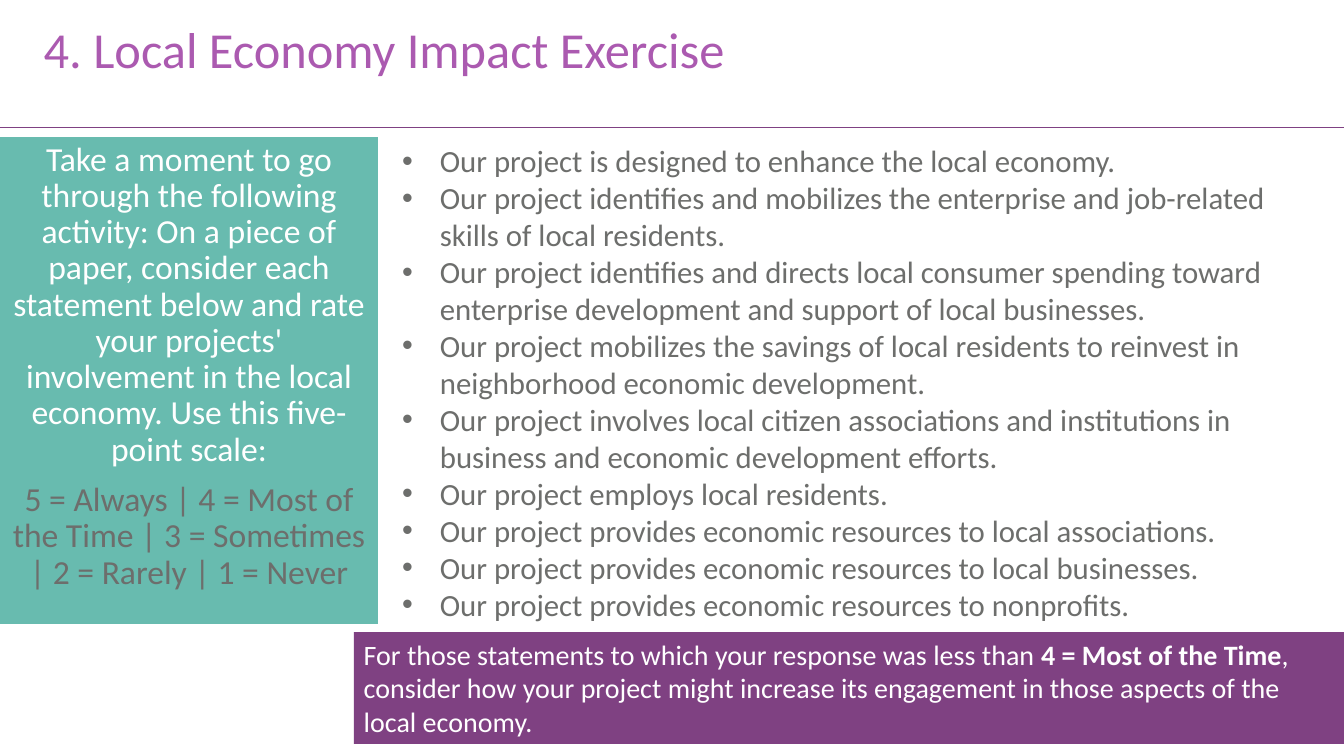
import pptx
import pptx.util
import pptx.dml.color
import pptx.enum.text
import pptx.enum.shapes
import pptx.oxml.ns
import lxml.etree
from dataclasses import dataclass

Pt = pptx.util.Pt
qn = pptx.oxml.ns.qn
ALIGN = pptx.enum.text.PP_ALIGN

HEADING = "4. Local Economy Impact Exercise"
INSTRUCTIONS = (
    "Take a moment to go through the following activity: On a piece of paper, "
    "consider each statement below and rate your projects' involvement in the "
    "local economy. Use this five-point scale:"
)
SCALE = "5 = Always | 4 = Most of the Time | 3 = Sometimes | 2 = Rarely | 1 = Never"
STATEMENTS = [
    "Our project is designed to enhance the local economy.",
    "Our project identifies and mobilizes the enterprise and job-related skills of local residents.",
    "Our project identifies and directs local consumer spending toward enterprise development and support of local businesses.",
    "Our project mobilizes the savings of local residents to reinvest in neighborhood economic development.",
    "Our project involves local citizen associations and institutions in business and economic development efforts.",
    "Our project employs local residents.",
    "Our project provides economic resources to local associations.",
    "Our project provides economic resources to local businesses.",
    "Our project provides economic resources to nonprofits.",
]
FOLLOW_UP = [
    ("For those statements to which your response was less than ", False),
    ("4 = Most of the Time", True),
    (", consider how your project might increase its engagement in those aspects of the local economy.", False),
]


@dataclass(frozen=True)
class Theme:
    font: str = "Calibri"
    heading: str = "AB5AB0"
    purple: str = "7F4182"
    teal: str = "68BBAF"
    grey: str = "6D6E6C"
    white: str = "FFFFFF"
    heading_size: int = 36
    sidebar_size: int = 24
    statement_size: int = 22
    follow_up_size: int = 20


THEME = Theme()
WIDTH, HEIGHT = 960, 540
RULE_Y = 90.72
CONTENT_TOP = 97.92
INDENT = 27


def rgb(value):
    return pptx.dml.color.RGBColor.from_string(value)


def write(frame, text, *, size, color, align=ALIGN.LEFT, spacing=1.0, before=0, bullet=None, first=False):
    paragraph = frame.paragraphs[0] if first else frame.add_paragraph()
    paragraph.alignment = align
    paragraph.line_spacing = spacing
    paragraph.space_before = Pt(before)
    if bullet:
        properties = paragraph._p.get_or_add_pPr()
        properties.set("marL", str(Pt(INDENT)))
        properties.set("indent", str(-Pt(INDENT)))
        lxml.etree.SubElement(properties, qn("a:buFont")).set("typeface", "Arial")
        lxml.etree.SubElement(properties, qn("a:buChar")).set("char", bullet)
    for words, bold in [(text, False)] if isinstance(text, str) else text:
        run = paragraph.add_run()
        run.text = words
        run.font.name = THEME.font
        run.font.size = Pt(size)
        run.font.bold = bold
        run.font.color.rgb = rgb(color)


def prepare(box, left, top, width, height, fill=None):
    box.left, box.top, box.width, box.height = Pt(left), Pt(top), Pt(width), Pt(height)
    if fill:
        box.fill.solid()
        box.fill.fore_color.rgb = rgb(fill)
    frame = box.text_frame
    frame.word_wrap = True
    frame.auto_size = pptx.enum.text.MSO_AUTO_SIZE.NONE
    frame.vertical_anchor = pptx.enum.text.MSO_ANCHOR.TOP
    return frame


def main():
    deck = pptx.Presentation()
    deck.slide_width, deck.slide_height = Pt(WIDTH), Pt(HEIGHT)
    slide = deck.slides.add_slide(deck.slide_layouts[1])
    shapes = slide.shapes

    rule = shapes.add_connector(
        pptx.enum.shapes.MSO_CONNECTOR.STRAIGHT, Pt(WIDTH), Pt(RULE_Y), Pt(0), Pt(RULE_Y)
    )
    rule.line.color.rgb = rgb(THEME.purple)
    rule.line.width = Pt(0.5)
    lxml.etree.SubElement(rule._element.spPr, qn("a:effectLst"))

    heading = prepare(shapes.title, 24, 14.4, 661.68, 69.12)
    write(heading, HEADING, size=THEME.heading_size, color=THEME.heading, spacing=0.9, first=True)

    sidebar = prepare(shapes.add_textbox(0, 0, 0, 0), 0, CONTENT_TOP, 270, 347.76, THEME.teal)
    sidebar_format = dict(size=THEME.sidebar_size, align=ALIGN.CENTER, spacing=0.9)
    write(sidebar, INSTRUCTIONS, color=THEME.white, first=True, **sidebar_format)
    write(sidebar, SCALE, color=THEME.grey, before=10, **sidebar_format)

    statements = prepare(slide.placeholders[1], 280, CONTENT_TOP, 661.68, 353.52)
    for index, statement in enumerate(STATEMENTS):
        write(statements, statement, size=THEME.statement_size, color=THEME.grey, bullet="•", first=index == 0)

    follow_up_left = 252.72
    follow_up = prepare(
        shapes.add_textbox(0, 0, 0, 0), follow_up_left, 451.44, WIDTH - follow_up_left, 79.92, THEME.purple
    )
    write(follow_up, FOLLOW_UP, size=THEME.follow_up_size, color=THEME.white, first=True)

    deck.save("out.pptx")


if __name__ == "__main__":
    main()
